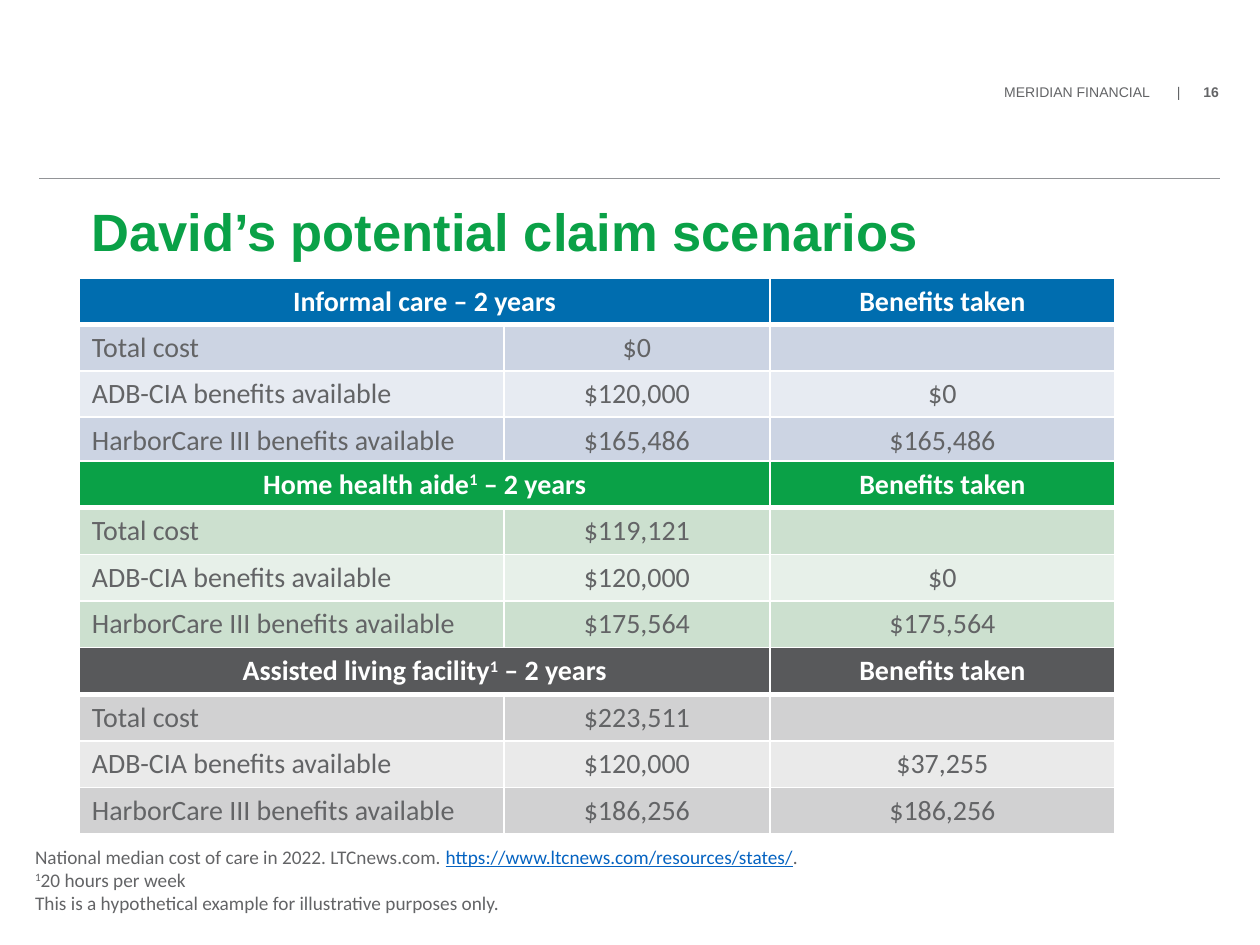
from lxml import etree
from pptx import Presentation
from pptx.dml.color import RGBColor
from pptx.enum.shapes import MSO_CONNECTOR
from pptx.enum.text import PP_ALIGN
from pptx.oxml.ns import qn
from pptx.util import Inches, Pt

STRAIGHT = MSO_CONNECTOR.STRAIGHT
LEFT, CENTER = PP_ALIGN.LEFT, PP_ALIGN.CENTER

WHITE = RGBColor(0xFF, 0xFF, 0xFF)
GRAY = RGBColor(0x63, 0x64, 0x66)
RULE_GRAY = RGBColor(0x92, 0x94, 0x97)
LINK_BLUE = RGBColor(0x05, 0x63, 0xC1)
BLUE = RGBColor(0x00, 0x6D, 0xAF)
BLUE_MID = RGBColor(0xCC, 0xD4, 0xE3)
BLUE_PALE = RGBColor(0xE7, 0xEB, 0xF2)
GREEN = RGBColor(0x0A, 0xA1, 0x47)
GREEN_MID = RGBColor(0xCC, 0xE0, 0xCF)
GREEN_PALE = RGBColor(0xE7, 0xF0, 0xE9)
CHARCOAL = RGBColor(0x58, 0x59, 0x5B)
CHARCOAL_MID = RGBColor(0xD1, 0xD1, 0xD2)
CHARCOAL_PALE = RGBColor(0xEA, 0xEA, 0xEA)

PAGE_FORMAT = {"name": "Arial", "size": Pt(8), "color": GRAY}
TITLE_FORMAT = {"name": "Arial", "size": Pt(30), "bold": True, "color": GREEN}
HEADER_FORMAT = {"name": "Calibri", "size": Pt(16), "bold": True, "color": WHITE}
BODY_FORMAT = {"name": "Calibri", "size": Pt(16), "bold": False, "color": GRAY}
NOTE_FORMAT = {"name": "Calibri", "size": Pt(11), "color": GRAY}
LINK = {"color": LINK_BLUE, "underline": True}
SUPERSCRIPT = {"baseline": 30000}

COLUMN_WIDTHS = (3.37, 2.11, 2.74)
ROW_LABELS = ("Total cost", "ADB-CIA benefits available", "HarborCare III benefits available")
SCENARIOS = (
    (2.21, 0.35, (BLUE, BLUE_MID, BLUE_PALE),
     [("Informal care – 2 years", {})],
     (("$0", ""), ("$120,000", "$0"), ("$165,486", "$165,486"))),
    (3.66, 0.37, (GREEN, GREEN_MID, GREEN_PALE),
     [("Home health aide", {}), ("1", SUPERSCRIPT), (" – 2 years", {})],
     (("$119,121", ""), ("$120,000", "$0"), ("$175,564", "$175,564"))),
    (5.14, 0.37, (CHARCOAL, CHARCOAL_MID, CHARCOAL_PALE),
     [("Assisted living facility", {}), ("1", SUPERSCRIPT), (" – 2 years", {})],
     (("$223,511", ""), ("$120,000", "$37,255"), ("$186,256", "$186,256"))),
)
NOTES = (
    [("National median cost of care in 2022. LTCnews.com. ", {}),
     ("https://www.ltcnews.com/resources/states/", LINK), (".", {})],
    [("1", SUPERSCRIPT), ("20 hours per week", {})],
    [("This is a hypothetical example for illustrative purposes only.", {})],
)


def add_runs(paragraph, runs, base_format):
    for text, changes in runs:
        run = paragraph.add_run()
        run.text = text
        for key, value in {**base_format, **changes}.items():
            if key == "color":
                run.font.color.rgb = value
            elif key == "baseline":
                run._r.get_or_add_rPr().set("baseline", str(value))
            else:
                setattr(run.font, key, value)


def add_text_frame(slide, box):
    frame = slide.shapes.add_textbox(*map(Inches, box)).text_frame
    frame.word_wrap = True
    return frame


def add_page_header(slide, box):
    frame = add_text_frame(slide, box)
    margins = {"margin_left": 0, "margin_right": 0, "margin_bottom": 0, "margin_top": Inches(0.02)}
    for key, value in margins.items():
        setattr(frame, key, value)
    paragraph = frame.paragraphs[0]
    tabs = etree.SubElement(paragraph._p.get_or_add_pPr(), qn("a:tabLst"))
    for position in (1.37, 1.58):
        etree.SubElement(tabs, qn("a:tab"), pos=str(Inches(position)), algn="l")
    add_runs(paragraph, [("MERIDIAN FINANCIAL\t|\t", {}), ("16", {"bold": True})], PAGE_FORMAT)


def add_rule(slide, left, top, width):
    rule = slide.shapes.add_connector(
        STRAIGHT, Inches(left), Inches(top), Inches(left + width), Inches(top))
    rule.line.color.rgb = RULE_GRAY
    rule.line.width = Pt(0.5)
    etree.SubElement(rule._element.spPr, qn("a:effectLst"))


def add_title(slide, box):
    paragraph = add_text_frame(slide, box).paragraphs[0]
    paragraph.line_spacing = Pt(31)
    add_runs(paragraph, [("David’s potential claim scenarios", {})], TITLE_FORMAT)


def set_borders(cell, row):
    widths = {"L": 1, "R": 1, "T": 3 if row == 1 else 1, "B": 3 if row == 0 else 1}
    properties = cell._tc.get_or_add_tcPr()
    for side, width in widths.items():
        line = etree.SubElement(properties, qn(f"a:ln{side}"), w=str(Pt(width)))
        fill = etree.SubElement(line, qn("a:solidFill"))
        etree.SubElement(fill, qn("a:srgbClr"), val=str(WHITE))


def fill_cell(cell, row, column, runs, color):
    set_borders(cell, row)
    cell.fill.solid()
    cell.fill.fore_color.rgb = color
    paragraph = cell.text_frame.paragraphs[0]
    paragraph.alignment = LEFT if row and column == 0 else CENTER
    if runs:
        add_runs(paragraph, runs, BODY_FORMAT if row else HEADER_FORMAT)
    else:
        etree.SubElement(paragraph._p, qn("a:endParaRPr"), sz="1600")


def add_scenario(slide, left, top, row_height, colors, heading, amounts):
    header_color, mid, pale = colors
    rows = [(heading, [], [("Benefits taken", {})])]
    for label, values in zip(ROW_LABELS, amounts):
        rows.append([[(text, {})] if text else [] for text in (label, *values)])
    table = slide.shapes.add_table(
        len(rows), len(COLUMN_WIDTHS), Inches(left), Inches(top),
        Inches(sum(COLUMN_WIDTHS)), Inches(row_height * len(rows))).table
    for column, width in zip(table.columns, COLUMN_WIDTHS):
        column.width = Inches(width)
    for r, row in enumerate(rows):
        color = (mid if r % 2 else pale) if r else header_color
        for c, runs in enumerate(row):
            fill_cell(table.cell(r, c), r, c, runs, color)
    table.cell(0, 0).merge(table.cell(0, 1))


def add_notes(slide, box):
    frame = add_text_frame(slide, box)
    for i, runs in enumerate(NOTES):
        paragraph = frame.add_paragraph() if i else frame.paragraphs[0]
        add_runs(paragraph, runs, NOTE_FORMAT)


def main():
    presentation = Presentation()
    presentation.slide_width = Inches(10)
    presentation.slide_height = Inches(7.5)
    slide = presentation.slides.add_slide(presentation.slide_layouts[6])
    add_rule(slide, 0.31, 1.42, 9.37)
    add_page_header(slide, (7.97, 0.64, 1.74, 0.15))
    add_title(slide, (0.63, 1.6, 8.13, 0.73))
    for top, row_height, colors, heading, amounts in SCENARIOS:
        add_scenario(slide, 0.63, top, row_height, colors, heading, amounts)
    add_notes(slide, (0.18, 6.66, 9.7, 0.66))
    presentation.save("out.pptx")


if __name__ == "__main__":
    main()
